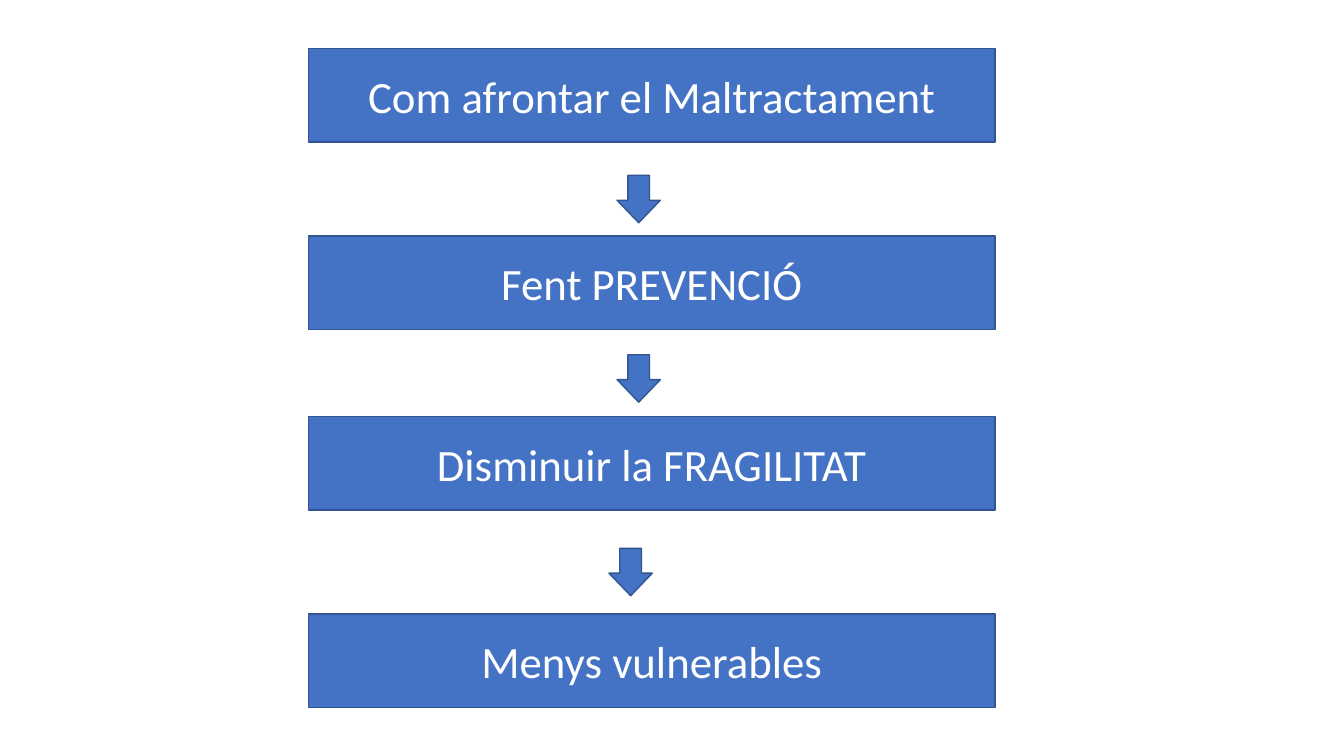
from pptx import Presentation
from pptx.dml.color import RGBColor
from pptx.enum.shapes import MSO_SHAPE
from pptx.enum.text import MSO_ANCHOR, PP_ALIGN
from pptx.util import Inches, Pt

BLUE = RGBColor(0x44, 0x72, 0xC4)
DARK_BLUE = RGBColor(0x32, 0x54, 0x91)
WHITE = RGBColor(0xFF, 0xFF, 0xFF)

STEP_LEFT, STEP_WIDTH, STEP_HEIGHT = 3.06, 6.81, 0.93
ARROW_WIDTH, ARROW_HEIGHT = 0.43, 0.47

# Each step with its top edge, and each arrow with its left and top edges
steps = [
    ("Com afrontar el Maltractament", 0.48),
    ("Fent PREVENCIÓ", 2.34),
    ("Disminuir la FRAGILITAT", 4.13),
    ("Menys vulnerables", 6.09),
]
arrows = [(6.12, 1.74), (6.12, 3.52), (6.04, 5.44)]

prs = Presentation()
prs.slide_width, prs.slide_height = Inches(13.33), Inches(7.5)
slide = prs.slides.add_slide(prs.slide_layouts[6])


def add_block(preset, left, top, width, height):
    block = slide.shapes.add_shape(
        preset, Inches(left), Inches(top), Inches(width), Inches(height))
    block.shadow.inherit = False
    block.fill.solid()
    block.fill.fore_color.rgb = BLUE
    block.line.color.rgb = DARK_BLUE
    block.line.width = Pt(1)
    return block


# Steps of the flow
for wording, top in steps:
    step = add_block(MSO_SHAPE.RECTANGLE, STEP_LEFT, top, STEP_WIDTH, STEP_HEIGHT)
    frame = step.text_frame
    frame.word_wrap = True
    frame.vertical_anchor = MSO_ANCHOR.MIDDLE
    frame.text = wording
    paragraph = frame.paragraphs[0]
    paragraph.alignment = PP_ALIGN.CENTER
    paragraph.font.name = "Calibri"
    paragraph.font.size = Pt(32)
    paragraph.font.color.rgb = WHITE

# Arrows between the steps
for left, top in arrows:
    arrow = add_block(MSO_SHAPE.DOWN_ARROW, left, top, ARROW_WIDTH, ARROW_HEIGHT)
    arrow.adjustments[0] = 0.5
    arrow.adjustments[1] = 0.52

prs.save("out.pptx")
